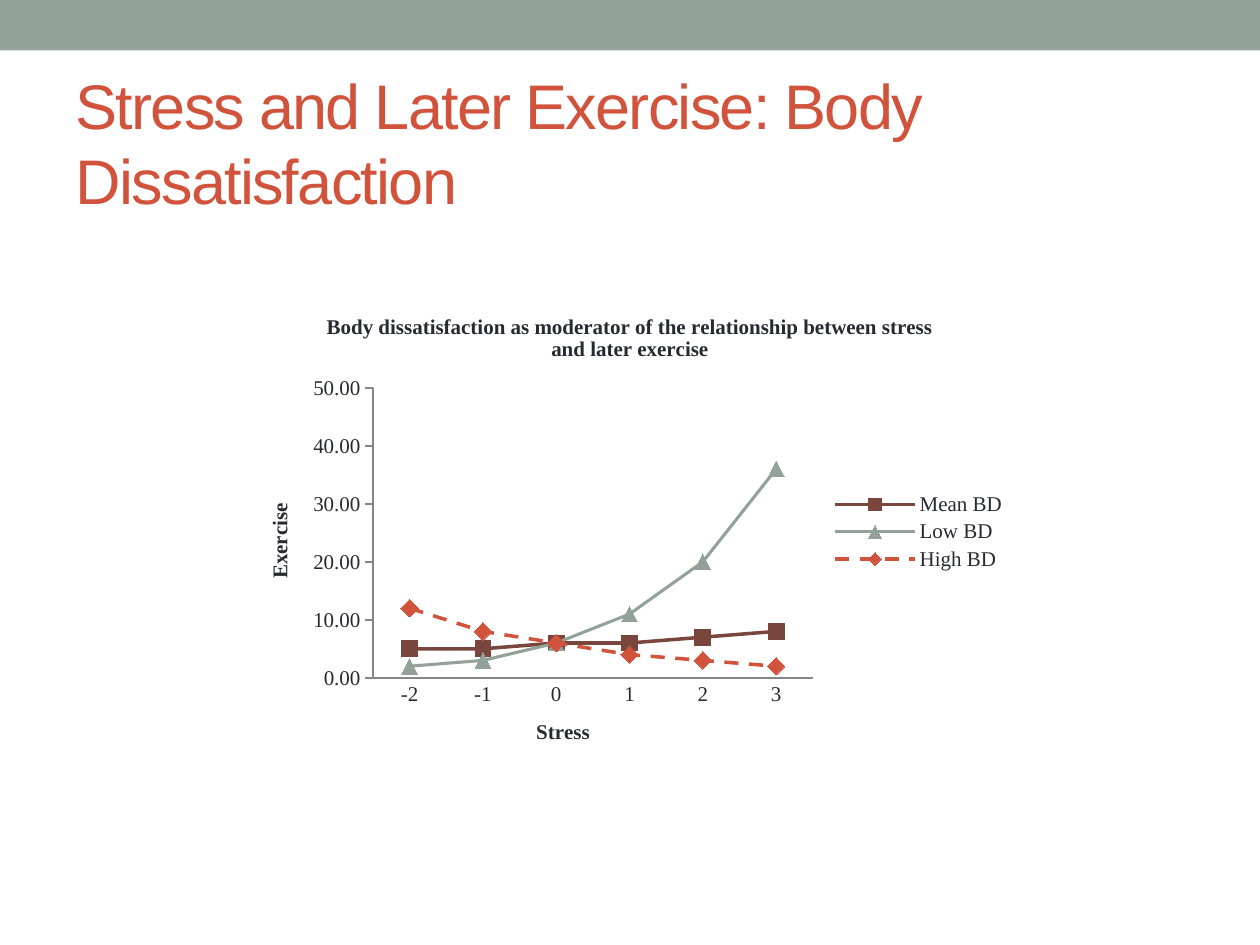
from dataclasses import dataclass
from typing import Any

from lxml.etree import SubElement
from pptx import Presentation
from pptx.chart.data import CategoryChartData
from pptx.dml.color import RGBColor
from pptx.enum.chart import XL_CHART_TYPE, XL_LEGEND_POSITION, XL_MARKER_STYLE, XL_TICK_MARK
from pptx.enum.dml import MSO_LINE
from pptx.enum.shapes import MSO_SHAPE
from pptx.enum.text import MSO_ANCHOR, MSO_AUTO_SIZE, PP_ALIGN
from pptx.oxml.ns import qn
from pptx.util import Pt


@dataclass(frozen=True)
class Theme:
    sage: str = "93A299"
    rust: str = "D2533C"
    brown: str = "79463D"
    ink: str = "292934"
    axis: str = "868686"
    sans: str = "Arial"
    serif: str = "Times New Roman"
    head: float = 36
    label: float = 12


@dataclass(frozen=True)
class Box:
    x: float
    y: float
    w: float
    h: float


@dataclass(frozen=True)
class Trend:
    name: str
    vals: tuple[int, ...]
    color: str
    width: float
    mark: XL_MARKER_STYLE
    size: int
    dash: MSO_LINE = MSO_LINE.SOLID


THEME = Theme()
LEVELS = ("-2", "-1", "0", "1", "2", "3")
TRENDS = (
    Trend("Mean BD", (5, 5, 6, 6, 7, 8), THEME.brown, 2, XL_MARKER_STYLE.SQUARE, 9),
    Trend("Low BD", (2, 3, 6, 11, 20, 36), THEME.sage, 1.75, XL_MARKER_STYLE.TRIANGLE, 9),
    Trend("High BD", (12, 8, 6, 4, 3, 2), THEME.rust, 2, XL_MARKER_STYLE.DIAMOND, 10,
          MSO_LINE.DASH),
)
GRAPH = Box(137.5, 167.8, 445, 272.2)
PLOT = Box(75.6, 53.9, 251.4, 165.7)


def style(font: Any, face: str, size: float, color: str, bold: bool = False) -> None:
    font.name, font.size, font.bold = face, Pt(size), bold
    font.color.rgb = RGBColor.from_string(color)


def paint(fill: Any, color: str) -> None:
    fill.solid()
    fill.fore_color.rgb = RGBColor.from_string(color)


def add_band(slide: Any) -> None:
    band = slide.shapes.add_shape(MSO_SHAPE.RECTANGLE, Pt(0), Pt(0), Pt(720), Pt(28.8))
    band.shadow.inherit = False
    paint(band.fill, THEME.sage)
    band.line.fill.background()


def add_head(slide: Any, text: str) -> None:
    head = slide.shapes.title
    head.left, head.top, head.width, head.height = Pt(36), Pt(42), Pt(648), Pt(78)
    frame = head.text_frame
    frame.word_wrap = True
    frame.auto_size = MSO_AUTO_SIZE.NONE
    frame.vertical_anchor = MSO_ANCHOR.MIDDLE
    para = frame.paragraphs[0]
    para.alignment = PP_ALIGN.LEFT
    run = para.add_run()
    run.text = text
    style(run.font, THEME.sans, THEME.head, THEME.rust)
    run.font._element.set("spc", "-100")


def add_name(owner: Any, text: str) -> None:
    run = owner.text_frame.paragraphs[0].add_run()
    run.text = text
    style(run.font, THEME.serif, THEME.label, THEME.ink, True)


def set_axis(axis: Any, name: str, tick: XL_TICK_MARK) -> None:
    axis.has_major_gridlines = False
    axis.major_tick_mark = tick
    axis.minor_tick_mark = XL_TICK_MARK.NONE
    axis.format.line.width = Pt(1)
    paint(axis.format.line.fill, THEME.axis)
    style(axis.tick_labels.font, THEME.serif, THEME.label, THEME.ink)
    add_name(axis.axis_title, name)


def set_trend(line: Any, trend: Trend) -> None:
    line.smooth = False
    line.format.line.width = Pt(trend.width)
    line.format.line.dash_style = trend.dash
    paint(line.format.line.fill, trend.color)
    line.marker.style, line.marker.size = trend.mark, trend.size
    paint(line.marker.format.fill, trend.color)
    paint(line.marker.format.line.fill, trend.color)


def set_plot(chart: Any) -> None:
    area = chart._chartSpace.chart.plotArea
    for old in area.findall(qn("c:layout")):
        area.remove(old)
    frame = SubElement(area, qn("c:layout"))
    area.insert(0, frame)
    box = SubElement(frame, qn("c:manualLayout"))
    parts = {"layoutTarget": "inner", "xMode": "edge", "yMode": "edge",
             "x": PLOT.x / GRAPH.w, "y": PLOT.y / GRAPH.h,
             "w": PLOT.w / GRAPH.w, "h": PLOT.h / GRAPH.h}
    for tag, val in parts.items():
        SubElement(box, qn(f"c:{tag}")).set("val", str(val))


def add_graph(slide: Any) -> None:
    data = CategoryChartData(number_format="0.00")
    data.categories = LEVELS
    for trend in TRENDS:
        data.add_series(trend.name, trend.vals)
    chart = slide.shapes.add_chart(XL_CHART_TYPE.LINE_MARKERS, Pt(GRAPH.x), Pt(GRAPH.y),
                                   Pt(GRAPH.w), Pt(GRAPH.h), data).chart
    style(chart.font, THEME.sans, 10, THEME.ink)
    chart.has_title = True
    add_name(chart.chart_title, "Body dissatisfaction as moderator of the "
             "relationship between stress and later exercise")
    chart.chart_title.include_in_layout = False
    chart.has_legend = True
    chart.legend.position = XL_LEGEND_POSITION.RIGHT
    chart.legend.include_in_layout = False
    style(chart.legend.font, THEME.serif, THEME.label, THEME.ink)
    set_axis(chart.category_axis, "Stress", XL_TICK_MARK.NONE)
    rise = chart.value_axis
    set_axis(rise, "Exercise", XL_TICK_MARK.OUTSIDE)
    rise.minimum_scale, rise.maximum_scale, rise.major_unit = 0, 50, 10
    rise.tick_labels.number_format = "#,##0.00"
    rise.tick_labels.number_format_is_linked = False
    chart.plots[0].vary_by_categories = False
    for line, trend in zip(chart.plots[0].series, TRENDS):
        set_trend(line, trend)
    set_plot(chart)


def main() -> None:
    deck = Presentation()
    deck.slide_width, deck.slide_height = Pt(720), Pt(540)
    slide = deck.slides.add_slide(deck.slide_layouts[5])
    add_band(slide)
    add_head(slide, "Stress and Later Exercise: Body Dissatisfaction")
    add_graph(slide)
    deck.save("out.pptx")


if __name__ == "__main__":
    main()
